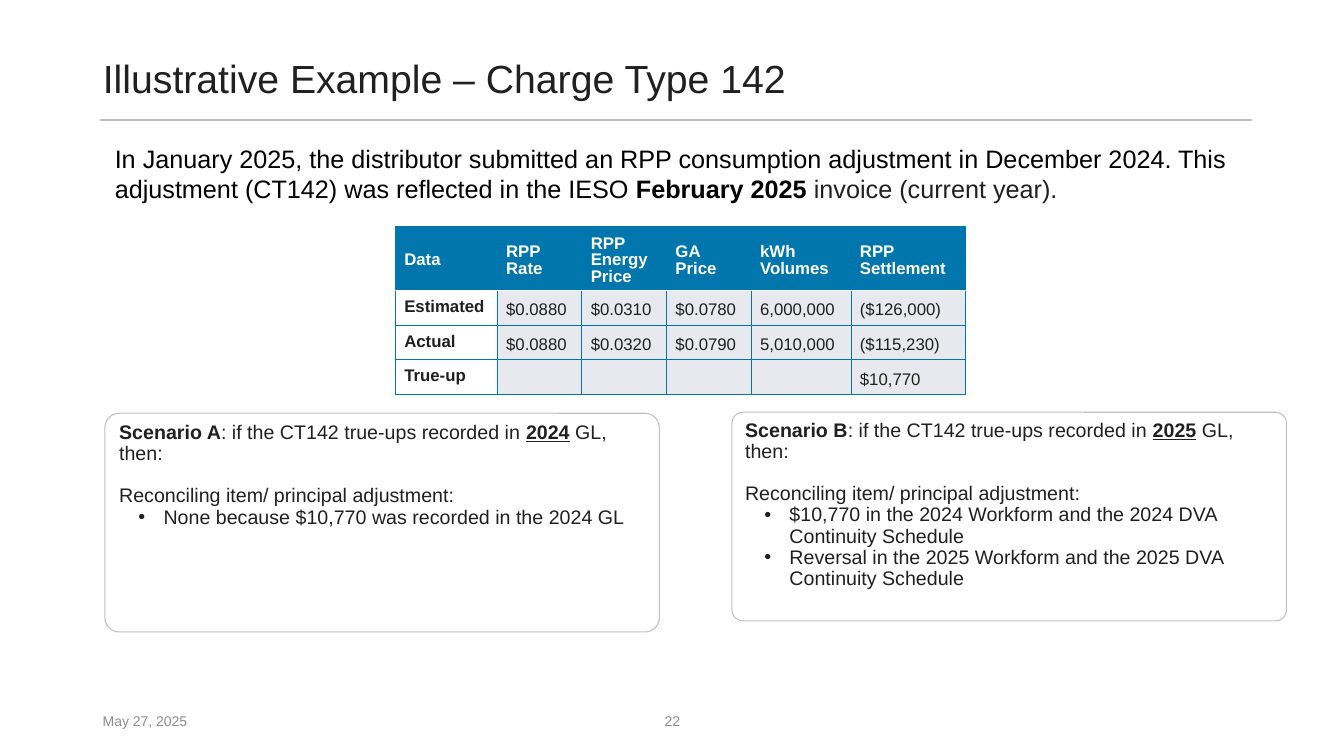
from dataclasses import dataclass

from lxml import etree
from pptx import Presentation
from pptx.dml.color import RGBColor
from pptx.enum.shapes import MSO_CONNECTOR, MSO_SHAPE
from pptx.enum.text import MSO_ANCHOR, MSO_AUTO_SIZE, PP_ALIGN
from pptx.oxml import parse_xml
from pptx.oxml.ns import nsdecls, qn
from pptx.util import Inches, Pt

STRAIGHT = MSO_CONNECTOR.STRAIGHT
ROUNDED = MSO_SHAPE.ROUNDED_RECTANGLE
TOP, MIDDLE = MSO_ANCHOR.TOP, MSO_ANCHOR.MIDDLE
LEFT, CENTER = PP_ALIGN.LEFT, PP_ALIGN.CENTER
NO_AUTOFIT = MSO_AUTO_SIZE.NONE


@dataclass(frozen=True)
class Theme:
    font: str = "Arial"
    ink: str = "202020"
    black: str = "000000"
    white: str = "FFFFFF"
    muted: str = "8D8D8D"
    rule: str = "BFBFBF"
    blue: str = "0076AD"
    band: str = "E7E9EE"
    title: int = 28
    intro: int = 18
    scenario: int = 14
    table: int = 12
    footer: int = 10


THEME = Theme()

COLUMN_WIDTHS = [1.01, 0.84, 0.84, 0.84, 0.99, 1.14]
ROW_HEIGHTS = [0.6, 0.31, 0.31, 0.31]
PRICE_ROWS = [
    ["Data", "RPP Rate", "RPP Energy Price", "GA Price", "kWh Volumes", "RPP Settlement"],
    ["Estimated", "$0.0880", "$0.0310", "$0.0780", "6,000,000", "($126,000)"],
    ["Actual", "$0.0880", "$0.0320", "$0.0790", "5,010,000", "($115,230)"],
    ["True-up", "", "", "", "", "$10,770"],
]


def rgb(color):
    return RGBColor.from_string(color)


def place(shape, box):
    for name, length in zip(("left", "top", "width", "height"), box):
        setattr(shape, name, Inches(length))


def write(para, spans, size, color=THEME.ink, **layout):
    """Fill a paragraph with (text, font overrides) spans."""
    for name, value in layout.items():
        setattr(para, name, value)
    for text, overrides in spans:
        span = para.add_run()
        span.text = text
        formats = {"name": THEME.font, "size": Pt(size), "bold": False, **overrides}
        span.font.color.rgb = rgb(formats.pop("color", color))
        for name, value in formats.items():
            setattr(span.font, name, value)


def set_bullet(para, bulleted):
    properties = para._p.get_or_add_pPr()
    properties.set("marL", str(Inches(0.44 if bulleted else 0)))
    properties.set("indent", str(Inches(-0.25 if bulleted else 0)))
    if bulleted:
        font = etree.SubElement(properties, qn("a:buFont"))
        font.set("typeface", THEME.font)
        etree.SubElement(properties, qn("a:buChar")).set("char", "•")
    else:
        etree.SubElement(properties, qn("a:buNone"))


def add_text(page, box, spans, size, color=THEME.ink, anchor=TOP, **layout):
    shape = page.shapes.add_textbox(*map(Inches, box))
    shape.text_frame.word_wrap = True
    shape.text_frame.vertical_anchor = anchor
    write(shape.text_frame.paragraphs[0], spans, size, color, **layout)


def add_heading(page, box, text):
    title = page.shapes.title
    place(title, box)
    frame = title.text_frame
    frame.auto_size, frame.vertical_anchor = NO_AUTOFIT, MIDDLE
    write(frame.paragraphs[0], [(text, {})], THEME.title, alignment=LEFT, line_spacing=0.9)
    # Rule under the title
    left, top, width, height = box
    start, end, level = left + 0.07, left + width, top + height - 0.01
    rule = page.shapes.add_connector(STRAIGHT, *map(Inches, (start, level, end, level)))
    rule.line.color.rgb, rule.line.width = rgb(THEME.rule), Pt(2)
    etree.SubElement(rule._element.spPr, qn("a:effectLst"))


def set_borders(cell, top, bottom):
    properties = cell._tc.get_or_add_tcPr()
    edge = (THEME.blue, 0.5)
    sides = {"lnL": edge, "lnR": edge, "lnT": top or edge, "lnB": bottom or edge}
    for position, (side, (color, width)) in enumerate(sides.items()):
        properties.insert(position, parse_xml(
            f'<a:{side} {nsdecls("a")} w="{Pt(width)}"><a:solidFill>'
            f'<a:srgbClr val="{color}"/></a:solidFill></a:{side}>'))


def add_price_table(page, box):
    frame = page.shapes.add_table(len(PRICE_ROWS), len(COLUMN_WIDTHS), *map(Inches, box))
    table = frame.table
    table.first_row = table.horz_banding = False
    for column, width in zip(table.columns, COLUMN_WIDTHS):
        column.width = Inches(width)
    for row, height in zip(table.rows, ROW_HEIGHTS):
        row.height = Inches(height)
    separator = (THEME.white, 1)
    for row, texts in enumerate(PRICE_ROWS):
        for column, text in enumerate(texts):
            cell = table.cell(row, column)
            header, label = row == 0, column == 0
            fill = THEME.blue if header else THEME.white if label else THEME.band
            cell.fill.solid()
            cell.fill.fore_color.rgb = rgb(fill)
            cell.margin_left = cell.margin_right = cell.margin_top = Inches(0.09)
            cell.margin_bottom = Inches(0.04)
            cell.vertical_anchor = MIDDLE if header else TOP
            set_borders(cell, separator if row == 1 else None, separator if header else None)
            para = cell.text_frame.paragraphs[0]
            if not text:
                ending = etree.SubElement(para._p, qn("a:endParaRPr"))
                ending.set("sz", str(THEME.table * 100))
                continue
            strong = header or label
            layout = {"line_spacing": Pt(12)} if strong else {
                "line_spacing": 1.07, "space_after": Pt(8)}
            write(para, [(text, {"bold": strong})], THEME.table,
                  THEME.white if header else THEME.ink, **layout)


def fill_scenario(shape, letter, year, items):
    """Outline a scenario panel and write its text."""
    shape.fill.background()
    shape.line.color.rgb, shape.line.width = rgb(THEME.rule), Pt(0.75)
    frame = shape.text_frame
    frame.word_wrap, frame.auto_size, frame.vertical_anchor = True, NO_AUTOFIT, TOP
    condition = [
        (f"Scenario {letter}", {"bold": True}),
        (": if the CT142 true-ups recorded in ", {}),
        (year, {"bold": True, "underline": True}),
        (" GL, then:", {}),
    ]
    lines = [(condition, 0, False),
             ([("Reconciling item/ principal adjustment:", {})], 15, False)]
    lines += [([(item, {})], 0, True) for item in items]
    for index, (spans, gap, bulleted) in enumerate(lines):
        para = frame.add_paragraph() if index else frame.paragraphs[0]
        set_bullet(para, bulleted)
        write(para, spans, THEME.scenario, alignment=LEFT, line_spacing=0.9,
              space_before=Pt(gap), space_after=Pt(0))


def add_scenario_a(page, box):
    body = page.placeholders[1]
    place(body, box)
    body._element.spPr.append(parse_xml(
        f'<a:prstGeom {nsdecls("a")} prst="roundRect"><a:avLst>'
        '<a:gd name="adj" fmla="val 6600"/></a:avLst></a:prstGeom>'))
    fill_scenario(body, "A", "2024", ["None because $10,770 was recorded in the 2024 GL"])


def add_scenario_b(page, box):
    panel = page.shapes.add_shape(ROUNDED, *map(Inches, box))
    panel.shadow.inherit = False
    panel.adjustments[0] = 0.053
    fill_scenario(panel, "B", "2025", [
        "$10,770 in the 2024 Workform and the 2024 DVA Continuity Schedule",
        "Reversal in the 2025 Workform and the 2025 DVA Continuity Schedule"])


def add_footer(page, box):
    left, top, width, height = box
    style = {"size": THEME.footer, "color": THEME.muted, "anchor": MIDDLE}
    add_text(page, (left, top, 3, height), [("May 27, 2025", {})], **style)
    add_text(page, (left + (width - 3) / 2, top, 3, height), [("22", {})],
             alignment=CENTER, space_after=Pt(6), **style)


def main():
    deck = Presentation()
    deck.slide_width, deck.slide_height = Inches(13.33), Inches(7.5)
    page = deck.slides.add_slide(deck.slide_layouts[1])
    add_heading(page, (0.92, 0.4, 11.5, 0.8), "Illustrative Example – Charge Type 142")
    add_text(page, (1.04, 1.37, 11.33, 0.71), [
        ("In January 2025, the distributor submitted an RPP consumption adjustment in "
         "December 2024. This adjustment (CT142) was reflected in the IESO ", {}),
        ("February 2025 ", {"bold": True}),
        ("invoice (current year).", {"color": THEME.ink}),
    ], THEME.intro, THEME.black)
    add_price_table(page, (3.92, 2.25, sum(COLUMN_WIDTHS), sum(ROW_HEIGHTS)))
    add_scenario_a(page, (1.04, 4.1, 5.5, 2.17))
    add_scenario_b(page, (7.26, 4.09, 5.5, 2.07))
    add_footer(page, (0.92, 6.95, 11.5, 0.4))
    deck.save("out.pptx")


if __name__ == "__main__":
    main()
